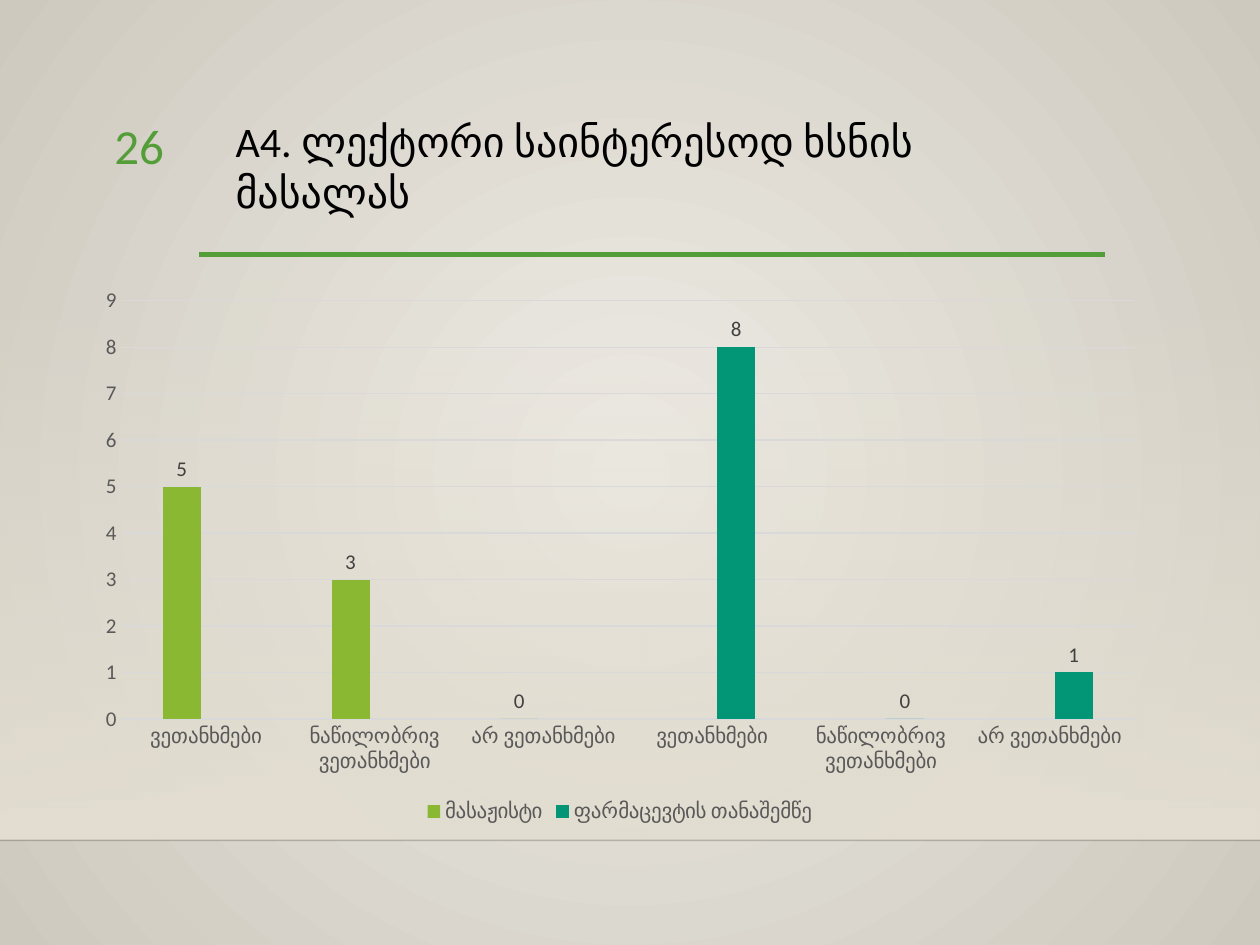
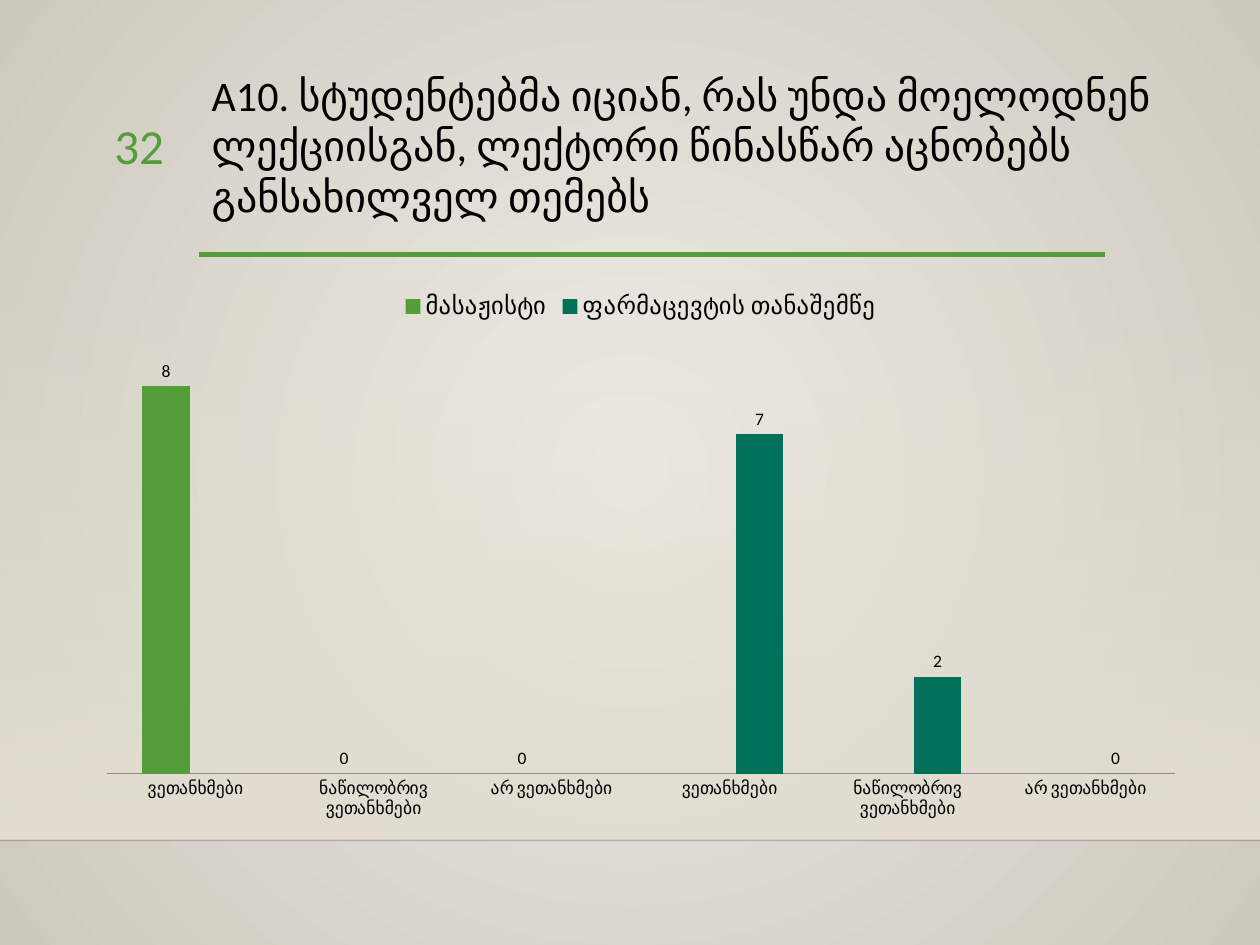
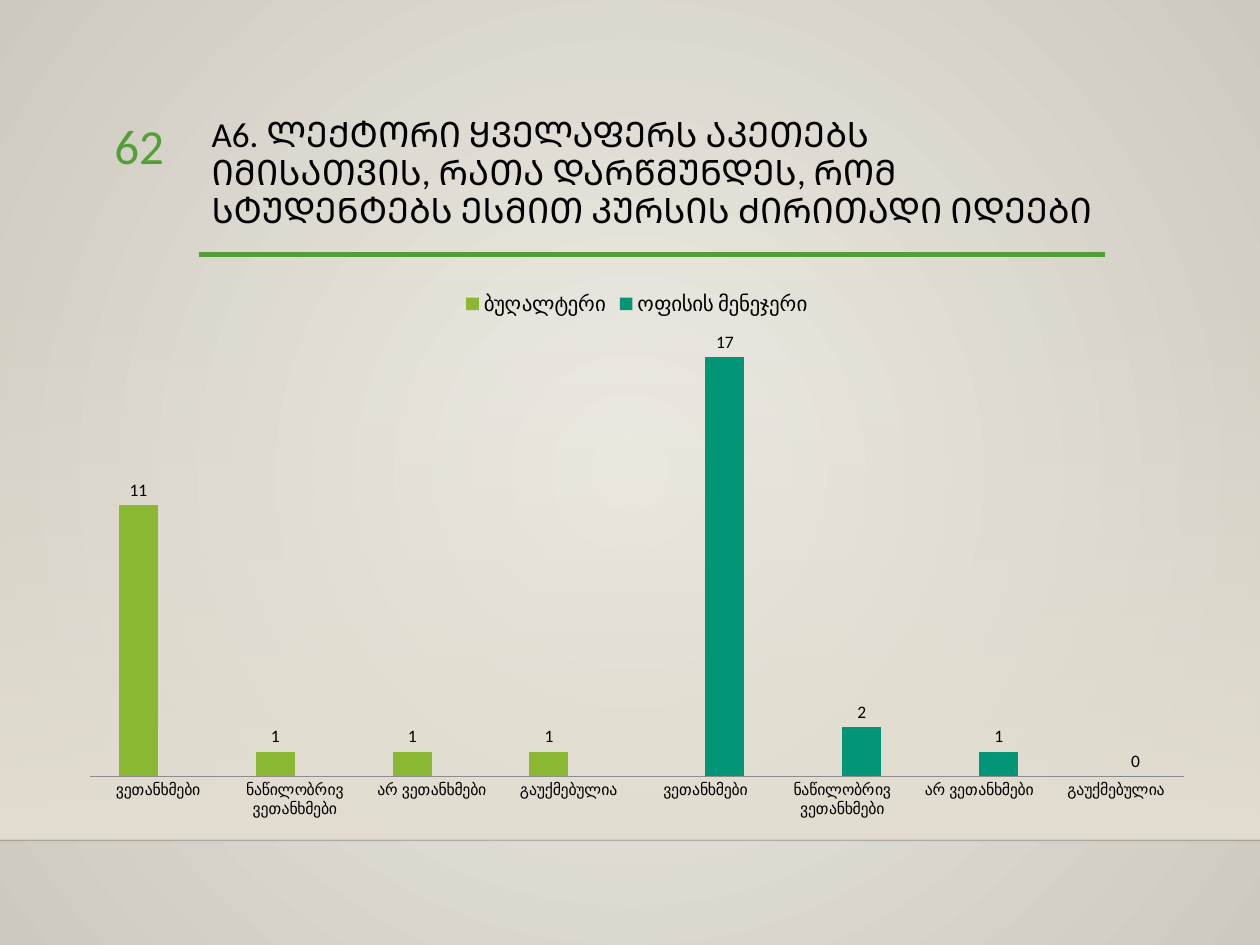
from lxml import etree
from pptx import Presentation
from pptx.chart.data import CategoryChartData
from pptx.dml.color import RGBColor
from pptx.enum.chart import XL_CHART_TYPE, XL_LABEL_POSITION, XL_LEGEND_POSITION, XL_TICK_MARK
from pptx.enum.shapes import MSO_CONNECTOR, MSO_SHAPE
from pptx.enum.text import MSO_ANCHOR, MSO_AUTO_SIZE, PP_ALIGN
from pptx.oxml.ns import qn
from pptx.util import Inches, Pt

CLUSTERED = XL_CHART_TYPE.COLUMN_CLUSTERED
OUTSIDE_END = XL_LABEL_POSITION.OUTSIDE_END
LEGEND_TOP, LEGEND_BOTTOM = XL_LEGEND_POSITION.TOP, XL_LEGEND_POSITION.BOTTOM
NO_TICK = XL_TICK_MARK.NONE
STRAIGHT = MSO_CONNECTOR.STRAIGHT
RECTANGLE = MSO_SHAPE.RECTANGLE
TOP = MSO_ANCHOR.TOP
NO_FIT = MSO_AUTO_SIZE.NONE
LEFT, RIGHT = PP_ALIGN.LEFT, PP_ALIGN.RIGHT

FONT = "Calibri"
BLACK = "000000"
GREEN, DARK_TEAL = "549E39", "017058"
LIME, TEAL = "8AB833", "029676"
LIGHT_GRAY, AXIS_GRAY = "D9D9D9", "8C8C8C"
TEXT_GRAY, LABEL_GRAY = "595959", "404040"
PAPER, PAPER_EDGE, BAND = "EEECE6", "CEC9BE", "E3DED1"
TITLE_ONLY = 5

AGREEMENT = ["ვეთანხმები", "ნაწილობრივ ვეთანხმები", "არ ვეთანხმები"]
AGREEMENT_OR_CANCELLED = AGREEMENT + ["გაუქმებულია"]
THERAPY_COURSES = ["მასაჟისტი", "ფარმაცევტის თანაშემწე"]
OFFICE_COURSES = ["ბუღალტერი", "ოფისის მენეჯერი"]


def color(value):
    return RGBColor.from_string(value)


def box(left, top, width, height):
    return [Inches(length) for length in (left, top, width, height)]


def apply_format(target, values):
    for name, value in values.items():
        setattr(target, name, value)


def set_font(font, size, hex_color=BLACK):
    apply_format(font, {"name": FONT, "size": Pt(size), "bold": False})
    font.color.rgb = color(hex_color)


def set_alpha(element, percent):
    first_color = element.find(".//" + qn("a:srgbClr"))
    etree.SubElement(first_color, qn("a:alpha")).set("val", str(percent * 1000))


def set_gradient(fill, *stops):
    fill.gradient()
    for stop, value in zip(fill.gradient_stops, stops):
        stop.color.rgb = color(value)


class SurveyDeck:
    def __init__(self):
        self.presentation = Presentation()
        apply_format(self.presentation,
                     {"slide_width": Inches(10), "slide_height": Inches(7.5)})
        self.slide = None
        self.paint_background()

    def paint_background(self):
        master = self.presentation.slide_master
        set_gradient(master.background.fill, PAPER, PAPER_EDGE)
        linear = master.element.find(".//" + qn("p:bgPr")).find(".//" + qn("a:lin"))
        circle = etree.Element(qn("a:path"))
        circle.set("path", "circle")
        center = etree.SubElement(circle, qn("a:fillToRect"))
        for side in "ltrb":
            center.set(side, "50000")
        linear.getparent().replace(linear, circle)

    def add_slide(self, number):
        layout = self.presentation.slide_layouts[TITLE_ONLY]
        self.slide = self.presentation.slides.add_slide(layout)
        self.add_band()
        self.add_line(0, 10, 6.67, "000001", 1, alpha=20)
        self.add_line(1.58, 8.77, 2.02, GREEN, 2.5)
        self.add_number(number)

    def add_band(self):
        band = self.slide.shapes.add_shape(RECTANGLE, *box(0, 2.2, 10, 4.46))
        band.shadow.inherit = False
        band.line.fill.background()
        set_gradient(band.fill, BAND, BAND)
        band.fill.gradient_angle = 270
        set_alpha(band.element.spPr, 0)

    def add_line(self, start, end, height, hex_color, width, alpha=None):
        line = self.slide.shapes.add_connector(
            STRAIGHT, Inches(start), Inches(height), Inches(end), Inches(height))
        line.line.color.rgb = color(hex_color)
        line.line.width = Pt(width)
        properties = line.element.spPr
        if alpha is not None:
            set_alpha(properties, alpha)
        etree.SubElement(properties, qn("a:effectLst"))

    def fill_text(self, shape, lines, size, hex_color=BLACK, alignment=LEFT, spacing=1.0):
        frame = shape.text_frame
        apply_format(frame, {"word_wrap": True, "auto_size": NO_FIT, "vertical_anchor": TOP})
        frame.text = "\n".join(lines)
        for paragraph in frame.paragraphs:
            apply_format(paragraph, {"alignment": alignment, "line_spacing": spacing})
            for run in paragraph.runs:
                set_font(run.font, size, hex_color)

    def add_number(self, number):
        shape = self.slide.shapes.add_textbox(*box(0.53, 0.87, 0.87, 0.55))
        self.fill_text(shape, [str(number)], 28, GREEN, RIGHT)

    def add_title(self, position, lines, size=24, spacing=1.0):
        title = self.slide.shapes.title
        apply_format(title, dict(zip(("left", "top", "width", "height"), box(*position))))
        self.fill_text(title, lines, size, spacing=spacing)

    def add_chart(self, position, answers, courses, counts, colors, maximum,
                  axis_size=10, axis_text=BLACK, axis_line=AXIS_GRAY, show_values=False,
                  legend_position=LEGEND_TOP, legend_size=12, label_size=10,
                  label_color=BLACK, gap=150, overlap=0):
        data = CategoryChartData()
        data.categories = answers * len(courses)
        for index, (course, values) in enumerate(zip(courses, counts)):
            padded = [None] * len(data.categories)
            start = index * len(answers)
            padded[start:start + len(answers)] = values
            data.add_series(course, padded)
        chart = self.slide.shapes.add_chart(CLUSTERED, *box(*position), data).chart
        apply_format(chart, {"has_title": False, "has_legend": True})
        set_font(chart.font, 10)
        apply_format(chart.legend, {"position": legend_position, "include_in_layout": False})
        set_font(chart.legend.font, legend_size, axis_text)

        plot = chart.plots[0]
        apply_format(plot, {"gap_width": gap, "overlap": overlap,
                            "vary_by_categories": False, "has_data_labels": True})
        apply_format(plot.data_labels, {"show_value": True, "position": OUTSIDE_END})
        set_font(plot.data_labels.font, label_size, label_color)
        for series, value in zip(plot.series, colors):
            series.format.fill.solid()
            series.format.fill.fore_color.rgb = color(value)

        for axis in (chart.category_axis, chart.value_axis):
            apply_format(axis, {"major_tick_mark": NO_TICK, "minor_tick_mark": NO_TICK})
            set_font(axis.tick_labels.font, axis_size, axis_text)
        category_line = chart.category_axis.format.line
        category_line.color.rgb = color(axis_line)
        category_line.width = Pt(0.75)

        value_axis = chart.value_axis
        apply_format(value_axis, {"minimum_scale": 0, "maximum_scale": maximum,
                                  "visible": show_values,
                                  "has_major_gridlines": show_values})
        value_axis.format.line.fill.background()
        if show_values:
            value_axis.major_unit = 1
            grid_line = value_axis.major_gridlines.format.line
            grid_line.color.rgb = color(LIGHT_GRAY)
            grid_line.width = Pt(0.75)


def main():
    deck = SurveyDeck()

    deck.add_slide(26)
    deck.add_title((1.77, 0.87, 6.8, 0.81), ["A4. ლექტორი საინტერესოდ ხსნის მასალას"])
    deck.add_chart((0.67, 2.2, 8.5, 4.38), AGREEMENT, THERAPY_COURSES,
                   [[5, 3, 0], [8, 0, 1]], [LIME, TEAL], 9,
                   axis_size=12, axis_text=TEXT_GRAY, axis_line=LIGHT_GRAY,
                   show_values=True, legend_position=LEGEND_BOTTOM,
                   label_size=12, label_color=LABEL_GRAY, gap=219, overlap=-27)

    deck.add_slide(32)
    deck.add_title((1.58, 0.5, 7.75, 1.62), [
        "A10. სტუდენტებმა იციან, რას უნდა მოელოდნენ",
        "ლექციისგან, ლექტორი წინასწარ აცნობებს",
        "განსახილველ თემებს"])
    deck.add_chart((0.67, 2.2, 8.83, 4.38), AGREEMENT, THERAPY_COURSES,
                   [[8, 0, 0], [7, 2, 0]], [GREEN, DARK_TEAL], 9,
                   legend_size=14, overlap=-25)

    deck.add_slide(62)
    deck.add_title((1.58, 0.88, 7.19, 1.15), [
        "A6. ᲚᲔᲥᲢᲝᲠᲘ ᲧᲕᲔᲚᲐᲤᲔᲠᲡ ᲐᲙᲔᲗᲔᲑᲡ ᲘᲛᲘᲡᲐᲗᲕᲘᲡ, ᲠᲐᲗᲐ ᲓᲐᲠᲬᲛᲣᲜᲓᲔᲡ, ᲠᲝᲛ "
        "ᲡᲢᲣᲓᲔᲜᲢᲔᲑᲡ ᲔᲡᲛᲘᲗ ᲙᲣᲠᲡᲘᲡ ᲫᲘᲠᲘᲗᲐᲓᲘ ᲘᲓᲔᲔᲑᲘ"], size=20, spacing=0.9)
    deck.add_chart((0.53, 2.2, 9.05, 4.38), AGREEMENT_OR_CANCELLED, OFFICE_COURSES,
                   [[11, 1, 1, 1], [17, 2, 1, 0]], [LIME, TEAL], 18, axis_size=9)

    deck.presentation.save("out.pptx")


if __name__ == "__main__":
    main()
